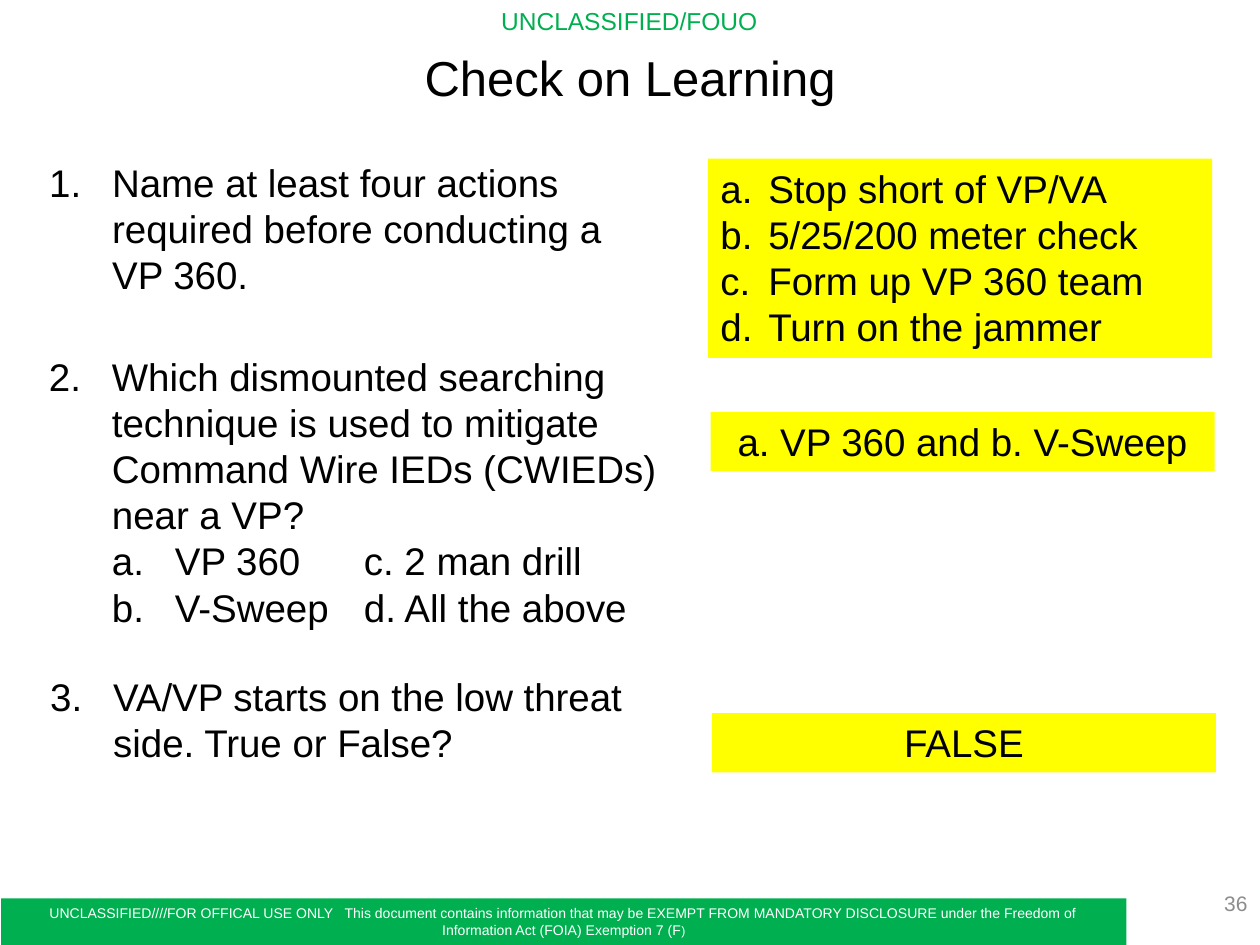
import pptx
import pptx.util
import pptx.dml.color
import pptx.enum.text
import pptx.enum.shapes
import pptx.oxml.ns
from lxml import etree

Inches = pptx.util.Inches
Color = pptx.dml.color.RGBColor
Align = pptx.enum.text.PP_ALIGN
Anchor = pptx.enum.text.MSO_ANCHOR

BLACK = Color(0, 0, 0)
WHITE = Color(255, 255, 255)
GREEN = Color(0, 0xB0, 0x50)
YELLOW = Color(255, 255, 0)
GRAY = Color(0x8C, 0x8C, 0x8C)


class Quiz:
    """Hold the style and the slide of a question and answer page."""

    def __init__(self, deck):
        self.name = "Arial"
        self.size = 22
        self.slide = deck.slides.add_slide(deck.slide_layouts[1])

    def place(self, shape, box):
        shape.left, shape.top, shape.width, shape.height = map(Inches, box)
        frame = shape.text_frame
        frame.word_wrap = True
        frame.auto_size = pptx.enum.text.MSO_AUTO_SIZE.NONE
        frame.vertical_anchor = Anchor.TOP
        return frame

    def style(self, par, size=None, color=BLACK, align=Align.LEFT):
        par.alignment = align
        par.space_before = pptx.util.Pt(0)
        par.font.name = self.name
        par.font.size = pptx.util.Pt(size or self.size)
        par.font.color.rgb = color

    def number(self, par, kind, margin, hang, start=1):
        props = par._p.get_or_add_pPr()
        props.set("marL", str(Inches(margin)))
        props.set("indent", str(-Inches(hang)))
        mark = etree.SubElement(props, pptx.oxml.ns.qn("a:buAutoNum"))
        mark.set("type", kind)
        if start > 1:
            mark.set("startAt", str(start))

    def text(self, box, words, size, color, align):
        shape = self.slide.shapes.add_textbox(0, 0, 0, 0)
        frame = self.place(shape, box)
        frame.text = words
        self.style(frame.paragraphs[0], size, color, align)
        return frame

    def title(self, box, words):
        frame = self.place(self.slide.shapes.title, box)
        frame.text = words
        self.style(frame.paragraphs[0], 28, align=Align.CENTER)

    def ask(self, box, start, words, picks=(), holder=None):
        shape = holder or self.slide.shapes.add_textbox(0, 0, 0, 0)
        frame = self.place(shape, box)
        frame.text = "\n".join([words, *picks])
        for row, par in enumerate(frame.paragraphs):
            if row:
                par.level = 1
                self.number(par, "alphaLcPeriod", 1, 0.5)
            else:
                self.number(par, "arabicPeriod", 0.5, 0.5, start)
            self.style(par)

    def panel(self, box, fill):
        kind = pptx.enum.shapes.MSO_SHAPE.RECTANGLE
        shape = self.slide.shapes.add_shape(kind, 0, 0, 0, 0)
        shape.shadow.inherit = False
        shape.fill.solid()
        shape.fill.fore_color.rgb = fill
        shape.line.fill.background()
        return self.place(shape, box)

    def answer(self, box, *lines):
        frame = self.panel(box, YELLOW)
        frame.text = "\n".join(lines)
        many = len(lines) > 1
        for par in frame.paragraphs:
            if many:
                par.level = 1
                self.number(par, "alphaLcPeriod", 0.38, 0.38)
            self.style(par, align=Align.LEFT if many else Align.CENTER)

    def footer(self, box, words, end):
        par = self.panel(box, GREEN).paragraphs[0]
        self.style(par, 8, WHITE, Align.CENTER)
        for part, size in ((words, 8), (end, 7)):
            run = par.add_run()
            run.text = part
            run.font.size = pptx.util.Pt(size)
            run.font.color.rgb = WHITE


def main():
    deck = pptx.Presentation()
    deck.slide_width, deck.slide_height = Inches(10), Inches(7.5)
    quiz = Quiz(deck)
    quiz.text((3.85, 0, 2.29, 0.34), "UNCLASSIFIED/FOUO", 14, GREEN, Align.CENTER)
    quiz.footer(
        (0.01, 7.13, 8.93, 0.37),
        "UNCLASSIFIED////FOR OFFICAL USE ONLY   This document contains "
        "information that may be EXEMPT FROM MANDATORY DISCLOSURE under the "
        "Freedom of Information Act (FOIA) Exemption 7 (F",
        ")",
    )
    page = quiz.text((7.67, 7.04, 2.33, 0.25), "36", 12, GRAY, Align.RIGHT)
    page.vertical_anchor = Anchor.MIDDLE
    quiz.title((0, 0.33, 10, 0.57), "Check on Learning")
    quiz.ask(
        (0.29, 1.21, 4.6, 1.21),
        1,
        "Name at least four actions required before conducting a VP 360.",
        holder=quiz.slide.placeholders[1],
    )
    quiz.ask(
        (0.29, 2.75, 5.55, 2.32),
        2,
        "Which dismounted searching technique is used to mitigate "
        "Command Wire IEDs (CWIEDs) near a VP?",
        ("VP 360 \tc. 2 man drill", "V-Sweep\td. All the above"),
    )
    quiz.ask(
        (0.3, 5.29, 5.02, 0.84),
        3,
        "VA/VP starts on the low threat side. True or False?",
    )
    quiz.answer(
        (5.62, 1.26, 4, 1.58),
        "Stop short of VP/VA",
        "5/25/200 meter check",
        "Form up VP 360 team",
        "Turn on the jammer",
    )
    quiz.answer((5.64, 3.27, 4, 0.47), "a. VP 360 and b. V-Sweep")
    quiz.answer((5.65, 5.66, 4, 0.47), "FALSE")
    deck.save("out.pptx")


if __name__ == "__main__":
    main()
